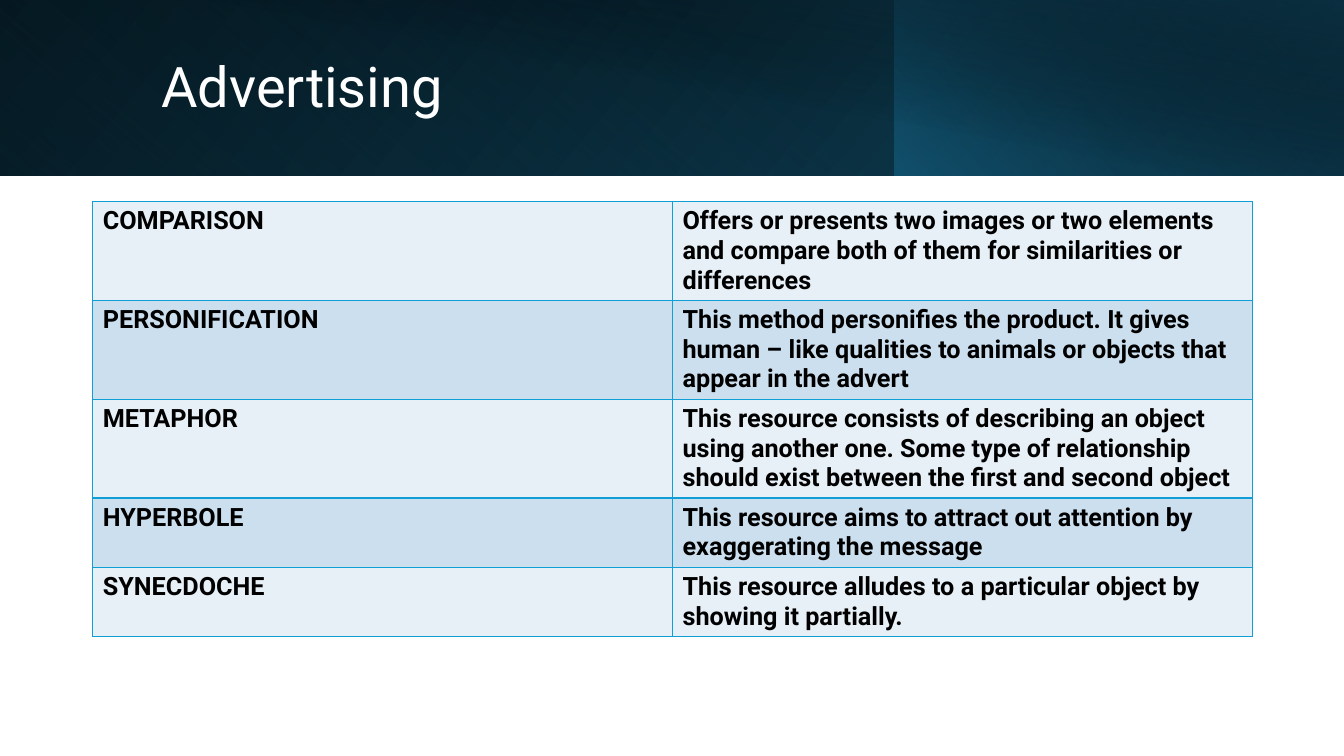
from lxml.etree import SubElement
from pptx import Presentation
from pptx.dml.color import RGBColor
from pptx.enum.shapes import MSO_SHAPE as SHAPE
from pptx.enum.text import MSO_ANCHOR as ANCHOR, PP_ALIGN as ALIGN
from pptx.oxml.ns import qn
from pptx.util import Inches, Pt

BLACK = RGBColor(0x00, 0x00, 0x00)
WHITE = RGBColor(0xFF, 0xFF, 0xFF)
DEEP = RGBColor(0x10, 0x48, 0x62)
TEAL = RGBColor(0x15, 0x60, 0x82)
NAVY = RGBColor(0x0B, 0x30, 0x41)
BORDER = RGBColor(0x0F, 0x9E, 0xD5)
BANDS = (RGBColor(0xE7, 0xF0, 0xF7), RGBColor(0xCC, 0xDF, 0xEF))
FONT = "Roboto"

DEVICES = [
    ("COMPARISON", "Offers or presents two images or two elements and compare "
     "both of them for similarities or differences", 0.98),
    ("PERSONIFICATION", "This method personifies the product. It gives human – like "
     "qualities to animals or objects that appear in the advert", 0.98),
    ("METAPHOR", "This resource consists of describing an object using another one. "
     "Some type of relationship should exist between the first and second object", 0.98),
    ("HYPERBOLE", "This resource aims to attract out attention by exaggerating "
     "the message", 0.68),
    ("SYNECDOCHE", "This resource alludes to a particular object by showing it "
     "partially.", 0.68),
]


def style_run(r, size, color, bold=False):
    r.font.name = FONT
    r.font.size = Pt(size)
    r.font.bold = bold
    r.font.color.rgb = color


def add_gradient(slide, x, y, w, h, angle, stops, flip=True, rotation=0):
    sp = slide.shapes.add_shape(SHAPE.RECTANGLE, Inches(x), Inches(y), Inches(w), Inches(h))
    sp.shadow.inherit = False
    sp.line.fill.background()
    sp.rotation = rotation
    if flip:
        sp._element.spPr.find(qn("a:xfrm")).set("flipH", "1")
    sp.fill.gradient()
    sp.fill.gradient_angle = 360 - angle
    for stop, (position, color, opacity) in zip(sp.fill.gradient_stops, stops):
        stop.position = position
        stop.color.rgb = color
    for clr, (position, color, opacity) in zip(sp._element.spPr.iter(qn("a:srgbClr")), stops):
        SubElement(clr, qn("a:alpha")).set("val", str(opacity * 1000))


def add_header(slide, x, y, w, h):
    split = 8.87
    add_gradient(slide, x, y, w, h, 140, [(0, BLACK, 100), (1, DEEP, 100)])
    add_gradient(slide, x, y, split, h, 230, [(0.2, TEAL, 0), (1, NAVY, 55)], rotation=180)
    add_gradient(slide, x + split, y, w - split, h, 220, [(0, TEAL, 66), (1, BLACK, 30)])
    add_gradient(slide, x + 0.5, y, w - 0.5, h, 280, [(0.5, BLACK, 0), (0.99, NAVY, 52)],
                 flip=False)


def add_title(slide, x, y, w, h):
    title = slide.shapes.title
    title.left, title.top = Inches(x), Inches(y)
    title.width, title.height = Inches(w), Inches(h)
    tf = title.text_frame
    tf.text = "Advertising"
    tf.vertical_anchor = ANCHOR.MIDDLE
    p = tf.paragraphs[0]
    p.alignment = ALIGN.LEFT
    p.line_spacing = 0.9
    style_run(p.runs[0], 40, WHITE)
    slide.shapes._spTree.append(title._element)


def add_borders(cell):
    tcPr = cell._tc.get_or_add_tcPr()
    for i, side in enumerate(("lnL", "lnR", "lnT", "lnB")):
        ln = tcPr.makeelement(qn(f"a:{side}"), {"w": str(Pt(1))})
        fill = SubElement(ln, qn("a:solidFill"))
        SubElement(fill, qn("a:srgbClr")).set("val", str(BORDER))
        tcPr.insert(i, ln)


def add_device_table(slide, x, y, w):
    height = sum(row_h for name, text, row_h in DEVICES)
    table = slide.shapes.add_table(len(DEVICES), 2, Inches(x), Inches(y),
                                   Inches(w), Inches(height)).table
    table.first_row = False
    for i, (name, text, row_h) in enumerate(DEVICES):
        table.rows[i].height = Inches(row_h)
        for cell, value in zip(table.rows[i].cells, (name, text)):
            cell.text_frame.text = value
            style_run(cell.text_frame.paragraphs[0].runs[0], 18, BLACK, bold=True)
            cell.fill.solid()
            cell.fill.fore_color.rgb = BANDS[i % 2]
            add_borders(cell)


def main():
    prs = Presentation()
    prs.slide_width, prs.slide_height = Inches(13.33), Inches(7.5)
    slide = prs.slides.add_slide(prs.slide_layouts[5])
    add_header(slide, 0, 0, 13.33, 1.74)
    add_title(slide, 1.5, 0.32, 10.82, 1.13)
    add_device_table(slide, 0.92, 2, 11.5)
    prs.save("out.pptx")


if __name__ == "__main__":
    main()
